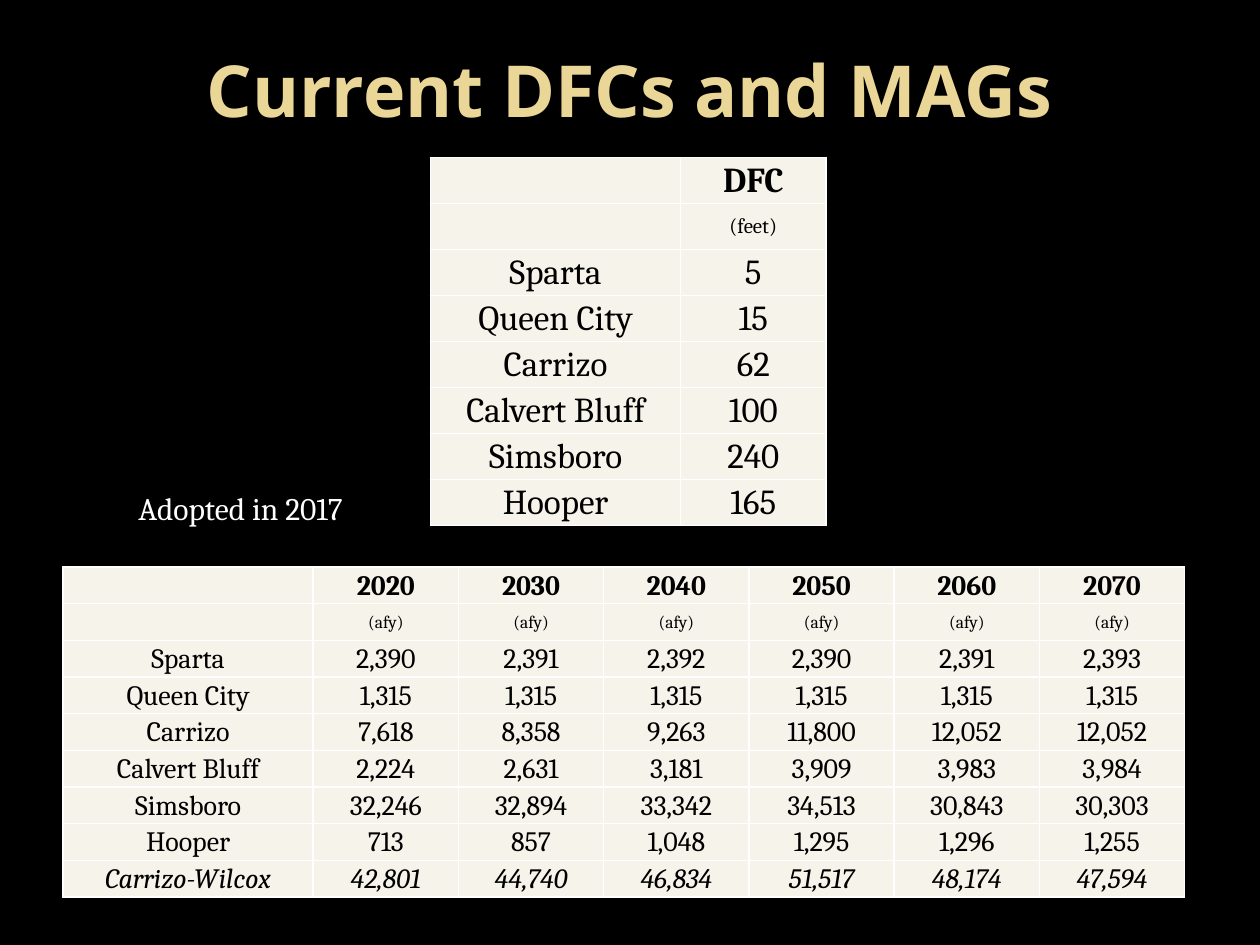
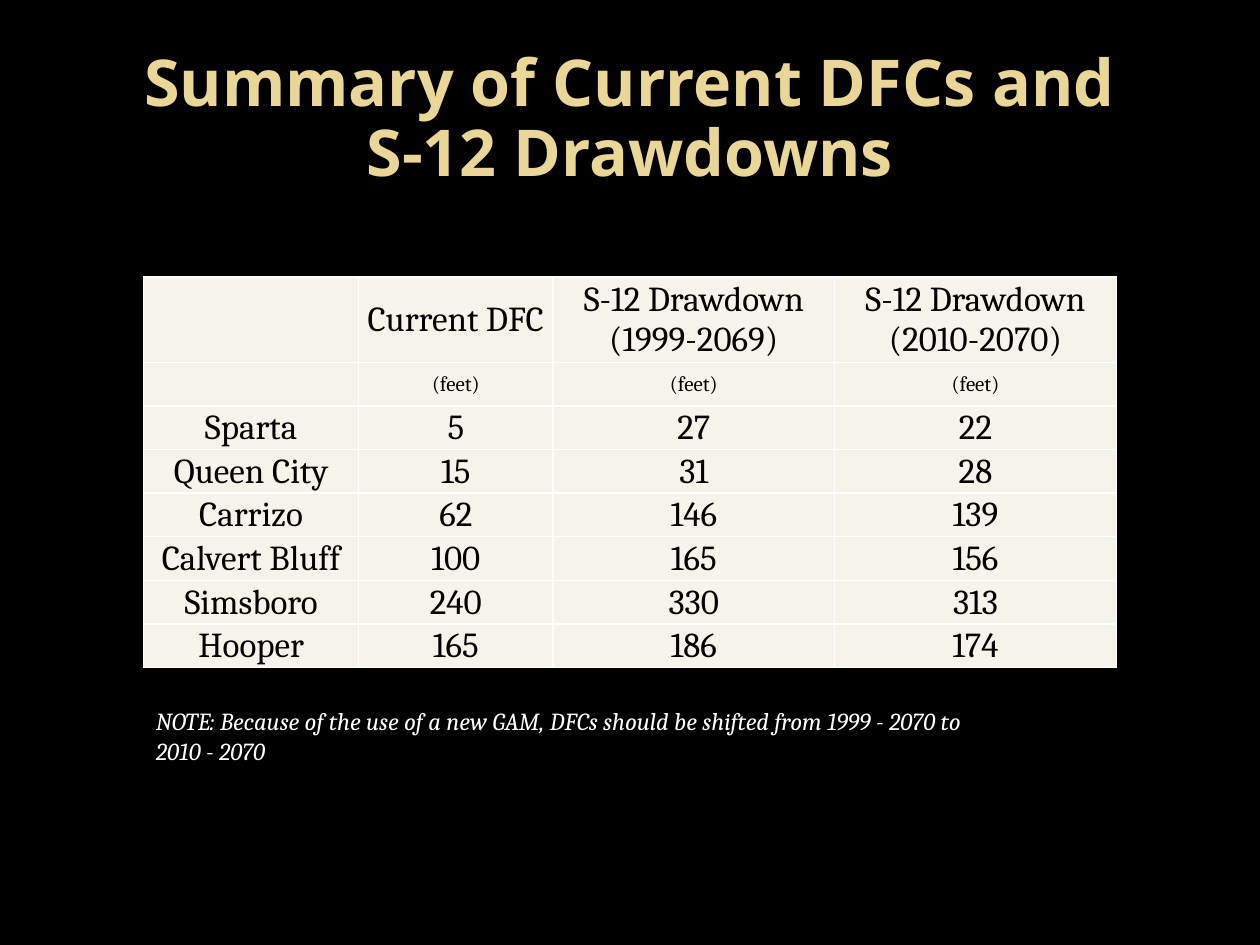
from dataclasses import dataclass

from lxml.etree import SubElement
from pptx import Presentation
from pptx.dml.color import RGBColor
from pptx.enum.text import MSO_ANCHOR, MSO_AUTO_SIZE, PP_ALIGN
from pptx.oxml import parse_xml
from pptx.oxml.ns import nsdecls, qn
from pptx.presentation import Presentation as Deck
from pptx.slide import Slide
from pptx.table import _Cell
from pptx.text.text import _Paragraph
from pptx.util import Pt

COLORS = {
    "background": "000000",
    "title": "EAD696",
    "cell": "F6F3EA",
    "cell_text": "000000",
    "border": "FFFFFF",
    "note": "FFFFFF",
}
TITLE_FONT = "Open Sans"
BODY_FONT = "Cambria"
TITLE_ONLY = 5
CELL_INSET = 0.72

AQUIFERS = ("Sparta", "Queen City", "Carrizo", "Calvert Bluff", "Simsboro", "Hooper")
CURRENT_DFCS = ("5", "15", "62", "100", "240", "165")
DRAWDOWNS_1999 = ("27", "31", "146", "165", "330", "186")
DRAWDOWNS_2010 = ("22", "28", "139", "156", "313", "174")
MAGS_BY_DECADE = {
    "2020": ("2,390", "1,315", "7,618", "2,224", "32,246", "713", "42,801"),
    "2030": ("2,391", "1,315", "8,358", "2,631", "32,894", "857", "44,740"),
    "2040": ("2,392", "1,315", "9,263", "3,181", "33,342", "1,048", "46,834"),
    "2050": ("2,390", "1,315", "11,800", "3,909", "34,513", "1,295", "51,517"),
    "2060": ("2,391", "1,315", "12,052", "3,983", "30,843", "1,296", "48,174"),
    "2070": ("2,393", "1,315", "12,052", "3,984", "30,303", "1,255", "47,594"),
}


@dataclass(frozen=True)
class Box:
    left: float
    top: float
    width: float
    height: float

    def lengths(self) -> tuple[Pt, Pt, Pt, Pt]:
        return Pt(self.left), Pt(self.top), Pt(self.width), Pt(self.height)


@dataclass(frozen=True)
class Title:
    text: str
    box: Box
    size: float
    line_spacing: float = 1.0


@dataclass(frozen=True)
class Note:
    text: str
    box: Box
    size: float
    italic: bool = False


@dataclass(frozen=True)
class AquiferTable:
    left: float
    top: float
    column_widths: tuple[float, ...]
    header_height: float
    row_height: float
    names: tuple[str, ...]
    columns: dict[str, tuple[str, ...]]
    unit: str
    size: float
    unit_size: float
    bold_header: bool = False
    italic_total: bool = False

    def rows(self) -> list[tuple[str, ...]]:
        units = ("",) + (self.unit,) * len(self.columns)
        return [("", *self.columns), units, *zip(self.names, *self.columns.values())]


def style_paragraph(paragraph: _Paragraph, font_name: str, size: float, color: str,
                    bold: bool = False, italic: bool = False) -> None:
    font = paragraph.font
    font.name = font_name
    font.size = Pt(size)
    font.bold = bold
    font.italic = italic
    font.color.rgb = RGBColor.from_string(COLORS[color])


def add_borders(cell: _Cell) -> None:
    properties = cell._tc.get_or_add_tcPr()
    for position, side in enumerate(("lnL", "lnR", "lnT", "lnB")):
        border = parse_xml(f'<a:{side} {nsdecls("a")} w="{Pt(1)}"/>')
        fill = SubElement(border, qn("a:solidFill"))
        SubElement(fill, qn("a:srgbClr"), val=COLORS["border"])
        properties.insert(position, border)


def fill_cell(cell: _Cell, text: str, size: float, bold: bool, italic: bool) -> None:
    cell.text = text
    cell.vertical_anchor = MSO_ANCHOR.MIDDLE
    cell.margin_left = cell.margin_right = cell.margin_top = Pt(CELL_INSET)
    cell.margin_bottom = Pt(0)
    cell.fill.solid()
    cell.fill.fore_color.rgb = RGBColor.from_string(COLORS["cell"])
    add_borders(cell)
    paragraph = cell.text_frame.paragraphs[0]
    paragraph.alignment = PP_ALIGN.CENTER
    style_paragraph(paragraph, BODY_FONT, size, "cell_text", bold, italic)


def add_aquifer_table(slide: Slide, content: AquiferTable) -> None:
    rows = content.rows()
    heights = [content.header_height] + [content.row_height] * (len(rows) - 1)
    box = Box(content.left, content.top, sum(content.column_widths), sum(heights))
    table = slide.shapes.add_table(
        len(rows), len(content.column_widths), *box.lengths()).table
    table.first_row = table.horz_banding = False
    for column, width in zip(table.columns, content.column_widths):
        column.width = Pt(width)
    for index, (values, height) in enumerate(zip(rows, heights)):
        table.rows[index].height = Pt(height)
        size = content.unit_size if index == 1 else content.size
        bold = content.bold_header and index == 0
        italic = content.italic_total and index == len(rows) - 1
        for cell, value in zip(table.rows[index].cells, values):
            fill_cell(cell, value, size, bold, italic)


def add_note(slide: Slide, note: Note) -> None:
    frame = slide.shapes.add_textbox(*note.box.lengths()).text_frame
    frame.word_wrap = True
    frame.auto_size = MSO_AUTO_SIZE.SHAPE_TO_FIT_TEXT
    frame.text = note.text
    style_paragraph(frame.paragraphs[0], BODY_FONT, note.size, "note", italic=note.italic)


def add_slide(deck: Deck, title: Title, tables: list[AquiferTable], note: Note) -> None:
    slide = deck.slides.add_slide(deck.slide_layouts[TITLE_ONLY])
    heading = slide.shapes.title
    heading.left, heading.top, heading.width, heading.height = title.box.lengths()
    frame = heading.text_frame
    frame.text = title.text
    frame.auto_size = MSO_AUTO_SIZE.NONE
    frame.vertical_anchor = MSO_ANCHOR.MIDDLE
    paragraph = frame.paragraphs[0]
    paragraph.alignment = PP_ALIGN.CENTER
    paragraph.line_spacing = title.line_spacing
    style_paragraph(paragraph, TITLE_FONT, title.size, "title", bold=True)
    for table in tables:
        add_aquifer_table(slide, table)
    add_note(slide, note)


def main() -> None:
    deck = Presentation()
    deck.slide_width, deck.slide_height = Pt(720), Pt(540)
    background = deck.slide_master.background.fill
    background.solid()
    background.fore_color.rgb = RGBColor.from_string(COLORS["background"])

    dfc_table = AquiferTable(
        left=246, top=90, column_widths=(143, 83), header_height=26.28, row_height=26.28,
        names=AQUIFERS, columns={"DFC": CURRENT_DFCS}, unit="(feet)",
        size=20, unit_size=12, bold_header=True)
    mag_table = AquiferTable(
        left=36, top=324, column_widths=(143,) + (83,) * len(MAGS_BY_DECADE),
        header_height=20.96, row_height=20.96,
        names=AQUIFERS + ("Carrizo-Wilcox",), columns=MAGS_BY_DECADE, unit="(afy)",
        size=16, unit_size=10, bold_header=True, italic_total=True)
    add_slide(
        deck,
        Title("Current DFCs and MAGs", Box(36, 6, 648, 90), 41),
        [dfc_table, mag_table],
        Note("Adopted in 2017", Box(72, 276, 162, 29), 18))

    drawdown_table = AquiferTable(
        left=82, top=158.2, column_widths=(123, 111, 161, 161),
        header_height=48.96, row_height=24.9, names=AQUIFERS,
        columns={
            "Current DFC": CURRENT_DFCS,
            "S-12 Drawdown (1999-2069)": DRAWDOWNS_1999,
            "S-12 Drawdown (2010-2070)": DRAWDOWNS_2010,
        },
        unit="(feet)", size=20, unit_size=12)
    add_slide(
        deck,
        Title("Summary of Current DFCs and S-12 Drawdowns", Box(42, 24, 636, 90), 36.9, 0.9),
        [drawdown_table],
        Note("NOTE: Because of the use of a new GAM, DFCs should be shifted "
             "from 1999 - 2070 to 2010 - 2070", Box(82, 400, 500, 41), 14, italic=True))

    deck.save("out.pptx")


if __name__ == "__main__":
    main()
